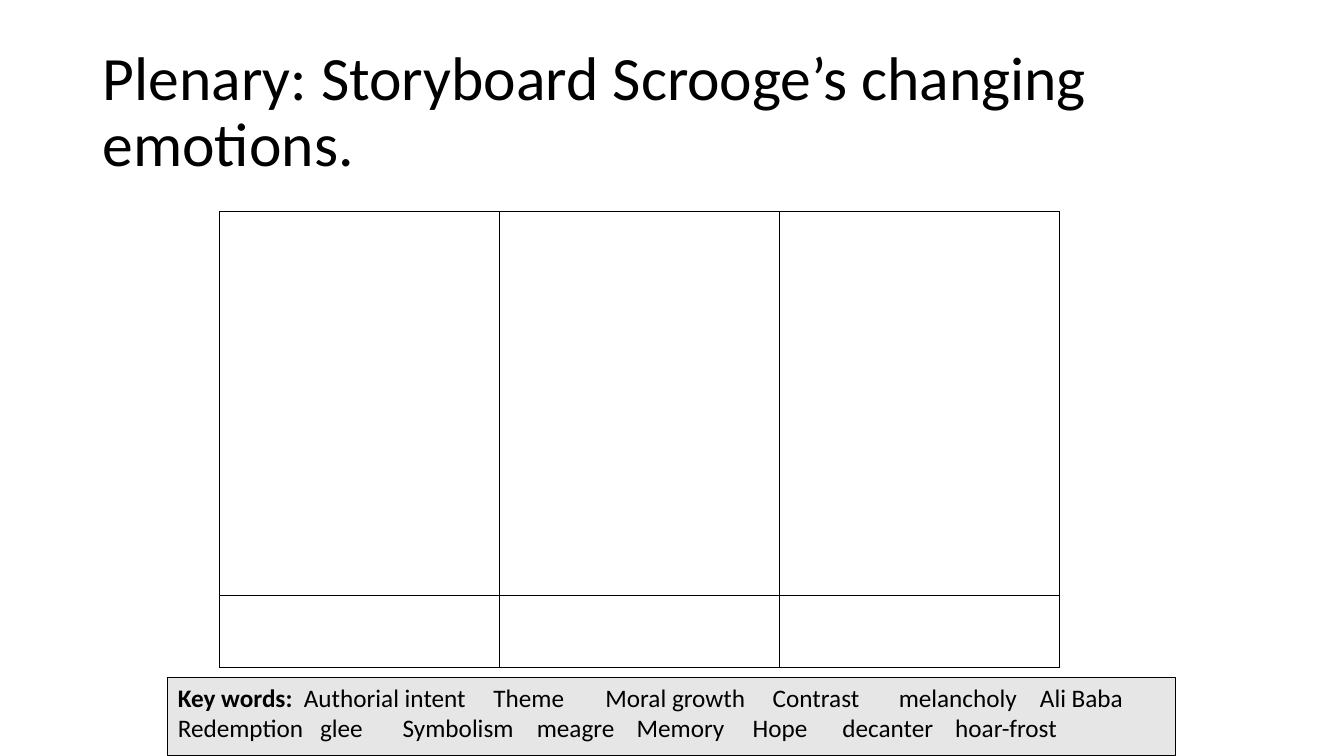
from lxml.etree import SubElement
from pptx import Presentation
from pptx.dml.color import RGBColor
from pptx.enum.shapes import MSO_SHAPE
from pptx.enum.text import MSO_ANCHOR, PP_ALIGN
from pptx.oxml.ns import qn
from pptx.util import Inches, Pt

BLACK = RGBColor(0x00, 0x00, 0x00)
PALE_GREY = RGBColor(0xE7, 0xE6, 0xE6)
FONT = "Calibri"
SLIDE_WIDTH, SLIDE_HEIGHT = Inches(13.33), Inches(7.5)

STORY_COLUMNS = 3
STORY_ROW_SHARES = (50.8, 9.47)  # drawing row, caption row

# Each line of key words: (heading, [(word, tab position in inches)])
KEY_WORD_LINES = [
    ("Key words:", [("Authorial intent", 1.25), ("Theme", 3.13),
                    ("Moral growth", 4.24), ("Contrast", 5.9),
                    ("melancholy", 7.15), ("Ali Baba", 8.55)]),
    ("", [("Redemption", 0), ("glee", 1.41), ("Symbolism", 2.23),
          ("meagre", 3.56), ("Memory", 4.55), ("Hope", 5.7),
          ("decanter", 6.59), ("hoar-frost", 7.71)]),
]


def across(percent):
    return round(SLIDE_WIDTH * percent / 100)


def down(percent):
    return round(SLIDE_HEIGHT * percent / 100)


def area(left, top, width, height):
    """Turn percentages of the slide into a position and size."""
    return across(left), down(top), across(width), down(height)


def apply_format(target, values):
    for attribute, value in values.items():
        setattr(target, attribute, value)


def add_run(paragraph, text, size, bold=False):
    run = paragraph.add_run()
    run.text = text
    apply_format(run.font, {"name": FONT, "size": Pt(size), "bold": bold})
    run.font.color.rgb = BLACK


def add_title(slide, text, place):
    frame = slide.shapes.add_textbox(*place).text_frame
    apply_format(frame, {"word_wrap": True, "vertical_anchor": MSO_ANCHOR.MIDDLE})
    heading = frame.paragraphs[0]
    heading.line_spacing = 0.9
    add_run(heading, text, 44)


def add_cell_borders(cell):
    properties = cell._tc.get_or_add_tcPr()
    for side in ("a:lnL", "a:lnR", "a:lnT", "a:lnB"):
        border = SubElement(properties, qn(side), w=str(Pt(1)))
        fill = SubElement(border, qn("a:solidFill"))
        SubElement(fill, qn("a:srgbClr"), val=str(BLACK))


def add_storyboard(slide, place):
    rows = len(STORY_ROW_SHARES)
    storyboard = slide.shapes.add_table(rows, STORY_COLUMNS, *place).table
    apply_format(storyboard, {"first_row": False, "horz_banding": False})
    for row, share in zip(storyboard.rows, STORY_ROW_SHARES):
        row.height = down(share)
    for cell in storyboard.iter_cells():
        add_cell_borders(cell)
        cell.fill.background()


def add_tab_stops(paragraph, positions):
    tab_list = SubElement(paragraph._p.get_or_add_pPr(), qn("a:tabLst"))
    for position in positions:
        SubElement(tab_list, qn("a:tab"), pos=str(Inches(position)), algn="l")


def add_key_words(slide, place):
    panel = slide.shapes.add_shape(MSO_SHAPE.RECTANGLE, *place)
    panel.shadow.inherit = False
    panel.fill.solid()
    panel.fill.fore_color.rgb = PALE_GREY
    panel.line.color.rgb = BLACK
    panel.line.width = Pt(0.75)
    frame = panel.text_frame
    apply_format(frame, {"word_wrap": True, "vertical_anchor": MSO_ANCHOR.TOP})
    for index, (heading, words) in enumerate(KEY_WORD_LINES):
        line = frame.add_paragraph() if index else frame.paragraphs[0]
        line.alignment = PP_ALIGN.LEFT
        add_tab_stops(line, [position for _, position in words if position])
        if heading:
            add_run(line, heading, 18, bold=True)
        text = "".join(("\t" if position else "") + word for word, position in words)
        add_run(line, text, 18)


def main():
    presentation = Presentation()
    apply_format(presentation, {"slide_width": SLIDE_WIDTH, "slide_height": SLIDE_HEIGHT})
    slide = presentation.slides.add_slide(presentation.slide_layouts[6])

    # Heading
    add_title(slide, "Plenary: Storyboard Scrooge’s changing emotions.",
              area(6.9, 5.33, 86.25, 19.33))
    # Empty storyboard with a caption row
    add_storyboard(slide, area(16.35, 28, 62.5, sum(STORY_ROW_SHARES)))
    # Key word bank
    add_key_words(slide, area(12.5, 89.6, 75, 10.4))

    presentation.save("out.pptx")


if __name__ == "__main__":
    main()
